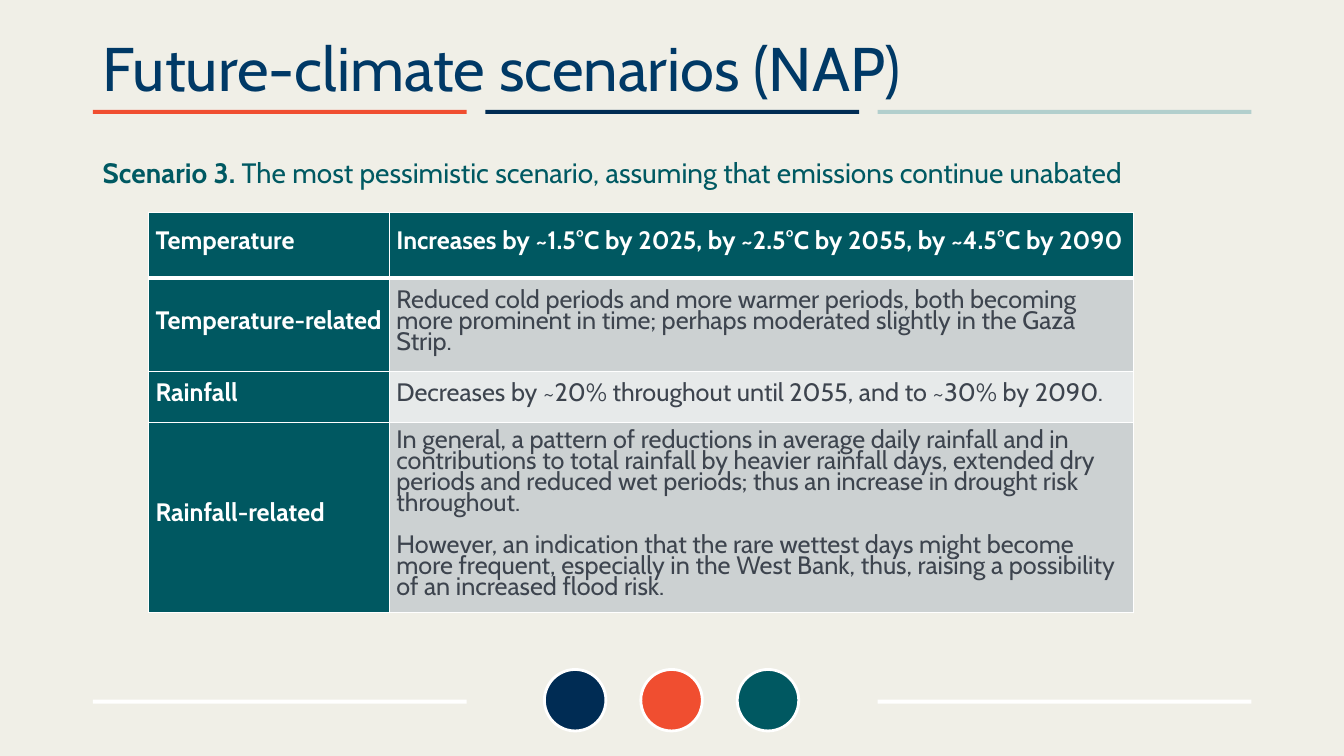
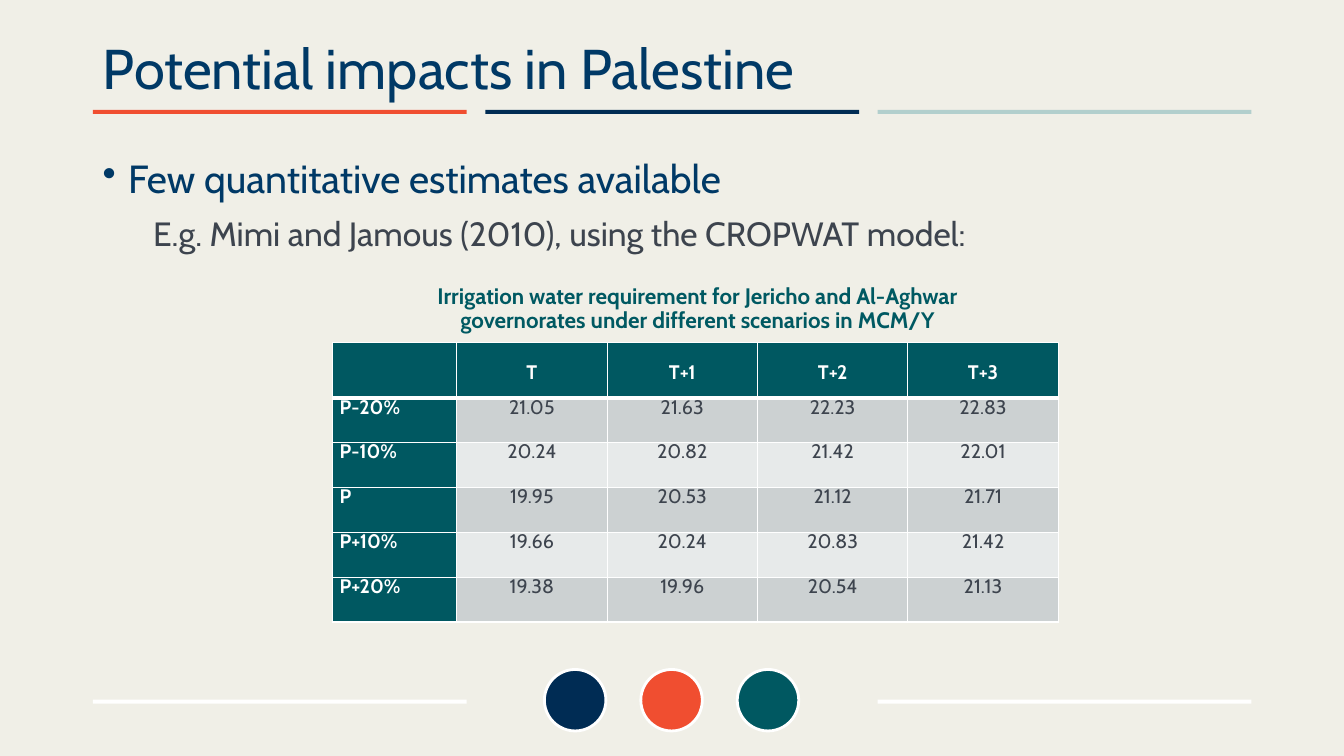
"""Build two slides on future-climate scenarios and their impacts in Palestine."""
from dataclasses import dataclass

from lxml import etree
from pptx import Presentation
from pptx.dml.color import RGBColor
from pptx.enum.shapes import MSO_SHAPE
from pptx.enum.text import MSO_ANCHOR, MSO_AUTO_SIZE, PP_ALIGN
from pptx.oxml.ns import qn
from pptx.util import Cm, Pt

RECTANGLE, OVAL = MSO_SHAPE.RECTANGLE, MSO_SHAPE.OVAL
TOP, MIDDLE = MSO_ANCHOR.TOP, MSO_ANCHOR.MIDDLE
LEFT, CENTER = PP_ALIGN.LEFT, PP_ALIGN.CENTER
NO_AUTOFIT = MSO_AUTO_SIZE.NONE


@dataclass(frozen=True)
class Theme:
    """Colours, font and type sizes of the deck."""
    font: str = "Cabin"
    paper: str = "F0EFE7"
    white: str = "FFFFFF"
    orange: str = "F04E30"
    navy: str = "002C54"
    mist: str = "B2CFCD"
    teal: str = "005861"
    heading: str = "003966"
    accent: str = "005962"
    ink: str = "3D444E"
    odd_row: str = "CCD1D2"
    even_row: str = "E7EAEA"
    title_large: int = 44
    title: int = 40
    point: int = 28
    detail: int = 24
    lead: int = 20
    scenario_cell: int = 18
    caption: int = 16
    water_cell: int = 14
    cell_line: int = 15


THEME = Theme()

MARGIN, CONTENT_WIDTH = 2.34, 29.21
BAR_WIDTH, BAR_HEIGHT, BAR_STEP = 9.42, 0.1, 9.89
HEADER_BAR_TOP, FOOTER_BAR_TOP = 2.77, 17.63
DOT_LEFT, DOT_TOP, DOT_SIZE, DOT_STEP = 13.72, 16.87, 1.55, 2.43

HEADER_BARS = [THEME.orange, THEME.navy, THEME.mist]
FOOTER_BAR_COLUMNS = [0, 2]
FOOTER_DOTS = [THEME.navy, THEME.orange, THEME.teal]

SCENARIO_INTRO = [
    {"runs": [("Scenario 3. ", True),
              ("The most pessimistic scenario, assuming that emissions continue unabated", False)],
     "size": THEME.lead, "color": THEME.accent},
]
SCENARIO_ROWS = [
    ("Temperature", "Increases by ~1.5°C by 2025, by ~2.5°C by 2055, by ~4.5°C by 2090"),
    ("Temperature-related",
     "Reduced cold periods and more warmer periods, both becoming more prominent in time; "
     "perhaps moderated slightly in the Gaza Strip."),
    ("Rainfall", "Decreases by ~20% throughout until 2055, and to ~30% by 2090."),
    ("Rainfall-related",
     "In general, a pattern of reductions in average daily rainfall and in contributions to "
     "total rainfall by heavier rainfall days, extended dry periods and reduced wet periods; "
     "thus an increase in drought risk throughout.\n"
     "However, an indication that the rare wettest days might become more frequent, "
     "especially in the West Bank, thus, raising a possibility of an increased flood risk."),
]

IMPACT_POINTS = [
    {"runs": [("Few quantitative estimates available", False)],
     "size": THEME.point, "color": THEME.heading, "indent": 0.64, "bullet": "•", "after": 6},
    {"runs": [("E.g. Mimi and Jamous (2010), using the CROPWAT model:", False)],
     "size": THEME.detail, "color": THEME.ink, "indent": 1.27, "before": 5},
    {"runs": [("Irrigation water requirement for Jericho and Al-Aghwar", True)],
     "size": THEME.caption, "color": THEME.accent, "indent": 1.27, "before": 22.5,
     "align": CENTER},
    {"runs": [("governorates under different scenarios in MCM/Y", True)],
     "size": THEME.caption, "color": THEME.accent, "indent": 1.27, "align": CENTER},
]
WATER_ROWS = [
    ("", "T", "T+1", "T+2", "T+3"),
    ("P-20%", "21.05", "21.63", "22.23", "22.83"),
    ("P-10%", "20.24", "20.82", "21.42", "22.01"),
    ("P", "19.95", "20.53", "21.12", "21.71"),
    ("P+10%", "19.66", "20.24", "20.83", "21.42"),
    ("P+20%", "19.38", "19.96", "20.54", "21.13"),
]


def rgb(color):
    """Turn a hex string into a colour."""
    return RGBColor.from_string(color)


def style_run(run, size, color, bold=False):
    """Give a run the deck's font with a size, colour and weight."""
    run.font.name = THEME.font
    run.font.size = Pt(size)
    run.font.bold = bold
    run.font.color.rgb = rgb(color)


def add_mark(slide, kind, left, top, width, height, color, outline=None):
    """Add one flat decorative shape."""
    mark = slide.shapes.add_shape(kind, Cm(left), Cm(top), Cm(width), Cm(height))
    mark.shadow.inherit = False
    mark.fill.solid()
    mark.fill.fore_color.rgb = rgb(color)
    if outline:
        mark.line.color.rgb = rgb(outline)
        mark.line.width = Pt(2)
    else:
        mark.line.fill.background()


def add_frame(slide):
    """Add the header bars, footer bars and footer dots."""
    bars = [(column, HEADER_BAR_TOP, color) for column, color in enumerate(HEADER_BARS)]
    bars += [(column, FOOTER_BAR_TOP, THEME.white) for column in FOOTER_BAR_COLUMNS]
    for column, top, color in bars:
        add_mark(slide, RECTANGLE, MARGIN + column * BAR_STEP, top, BAR_WIDTH, BAR_HEIGHT, color)
    for position, color in enumerate(FOOTER_DOTS):
        add_mark(slide, OVAL, DOT_LEFT + position * DOT_STEP, DOT_TOP, DOT_SIZE, DOT_SIZE,
                 color, THEME.white)


def add_slide(deck, heading, size):
    """Add a titled slide with the shared frame."""
    slide = deck.slides.add_slide(deck.slide_layouts[5])
    add_frame(slide)
    title = slide.shapes.title
    title.left, title.top = Cm(MARGIN), Cm(0.28)
    title.width, title.height = Cm(CONTENT_WIDTH), Cm(3.05)
    frame = title.text_frame
    frame.text = heading
    frame.word_wrap = True
    frame.auto_size = NO_AUTOFIT
    frame.vertical_anchor = MIDDLE
    paragraph = frame.paragraphs[0]
    paragraph.alignment = LEFT
    paragraph.line_spacing = 0.9
    style_run(paragraph.runs[0], size, THEME.heading)
    return slide


def add_body(slide, points, height):
    """Add the body text above a table."""
    body = slide.shapes.add_textbox(Cm(MARGIN), Cm(3.89), Cm(CONTENT_WIDTH), Cm(height))
    frame = body.text_frame
    frame.word_wrap = True
    for index, point in enumerate(points):
        paragraph = frame.add_paragraph() if index else frame.paragraphs[0]
        paragraph.alignment = point.get("align", LEFT)
        paragraph.line_spacing = 0.9
        paragraph.space_before = Pt(point.get("before", 0))
        paragraph.space_after = Pt(point.get("after", 0))
        indent = Cm(point.get("indent", 0))
        properties = paragraph._p.get_or_add_pPr()
        properties.set("marL", str(indent))
        if "bullet" in point:
            properties.set("indent", str(-indent))
            etree.SubElement(properties, qn("a:buChar"), char=point["bullet"])
        for text, bold in point["runs"]:
            run = paragraph.add_run()
            run.text = text
            style_run(run, point["size"], point["color"], bold)


def set_borders(cell, top, bottom):
    """Draw white borders round a cell, with top and bottom widths in points."""
    properties = cell._tc.get_or_add_tcPr()
    sides = [("a:lnL", 1), ("a:lnR", 1), ("a:lnT", top), ("a:lnB", bottom)]
    for index, (side, width) in enumerate(sides):
        line = etree.Element(qn(side), w=str(Pt(width)))
        fill = etree.SubElement(line, qn("a:solidFill"))
        etree.SubElement(fill, qn("a:srgbClr"), val=THEME.white)
        properties.insert(index, line)


def add_grid(slide, rows, left, top, widths, heights, size, anchor, value_align, header_drop=0):
    """Add a table with a teal header row, a teal first column and banded values."""
    grid = slide.shapes.add_table(len(rows), len(widths), Cm(left), Cm(top),
                                  Cm(sum(widths)), Cm(sum(heights))).table
    for column, width in zip(grid.columns, widths):
        column.width = Cm(width)
    for row, height in zip(grid.rows, heights):
        row.height = Cm(height)
    for r, row in enumerate(rows):
        for c, text in enumerate(row):
            cell = grid.cell(r, c)
            is_label = r == 0 or c == 0
            band = THEME.odd_row if r % 2 else THEME.even_row
            cell.fill.solid()
            cell.fill.fore_color.rgb = rgb(THEME.teal if is_label else band)
            set_borders(cell, 3 if r == 1 else 1, 3 if r == 0 else 1)
            cell.margin_left = cell.margin_right = Cm(0.18)
            cell.margin_top = Pt(0 if r else header_drop)
            cell.margin_bottom = 0
            cell.vertical_anchor = anchor
            cell.text_frame.text = text
            for index, paragraph in enumerate(cell.text_frame.paragraphs):
                paragraph.alignment = value_align if c else LEFT
                paragraph.line_spacing = Pt(THEME.cell_line)
                paragraph.space_before = Pt(THEME.cell_line if index else 0)
                for run in paragraph.runs:
                    style_run(run, size, THEME.white if is_label else THEME.ink, is_label)


def main():
    """Build and save the deck."""
    deck = Presentation()
    deck.slide_width, deck.slide_height = Cm(33.87), Cm(19.05)
    background = deck.slide_master.background.fill
    background.solid()
    background.fore_color.rgb = rgb(THEME.paper)

    scenarios = add_slide(deck, "Future-climate scenarios (NAP)", THEME.title_large)
    add_body(scenarios, SCENARIO_INTRO, 1.2)
    add_grid(scenarios, SCENARIO_ROWS, 3.74, 5.36, [6.07, 18.75], [1.65, 2.36, 1.27, 4.8],
             THEME.scenario_cell, MIDDLE, LEFT)

    impacts = add_slide(deck, "Potential impacts in Palestine", THEME.title)
    add_body(impacts, IMPACT_POINTS, 4.6)
    add_grid(impacts, WATER_ROWS, 8.38, 8.64, [3.13] + [3.79] * 4, [1.39] + [1.13] * 5,
             THEME.water_cell, TOP, CENTER, header_drop=THEME.cell_line)

    deck.save("out.pptx")


if __name__ == "__main__":
    main()
